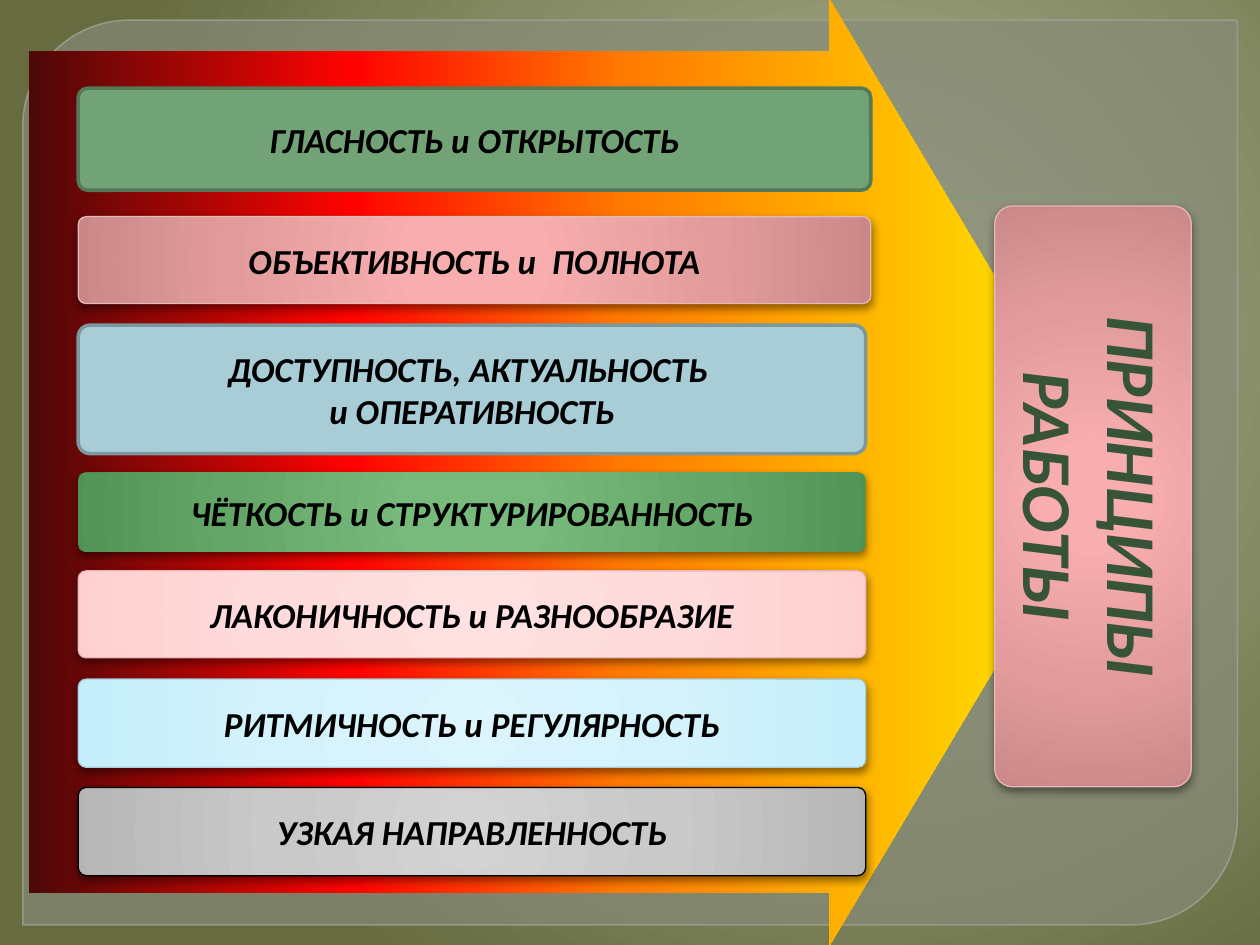
import pptx
import pptx.dml.color
import pptx.enum.shapes
import pptx.enum.text
import pptx.oxml
import pptx.oxml.ns
import pptx.util

Pt = pptx.util.Pt
SHAPES = pptx.enum.shapes.MSO_SHAPE

COLORS = {
    "panel": "888B7B", "panel_line": "9DA090", "sage": "72A376", "sage_line": "547957",
    "blue": "A8CDD7", "blue_line": "7C989F", "rose_line": "E8B7B7",
    "black": "000000", "title": "375439",
}
GRADIENTS = {
    "backdrop": {0: "A9AE8D", 20: "9FA583", 100: "666C40"},
    "flame": {0: "FFF200", 45: "FF7A00", 70: "FF0300", 100: "4D0808"},
    "rose": {0: "F9AFAF", 15: "F8AEAE", 62: "E29B9B", 97: "CC8A8A", 100: "CA8787"},
    "green": {0: "77BB7C", 15: "77BA7C", 62: "63A668", 97: "549559", 100: "4F9254"},
    "blush": {0: "FFE1E1", 50: "FFDBDB", 97: "FFD1D1", 100: "FFCECE"},
    "ice": {0: "DCF4FC", 50: "D4F2FB", 97: "C6EFFB", 100: "C1EFFD"},
    "gray": {0: "D3D3D3", 50: "C9C9C9", 97: "B8B8B8", 100: "B2B2B2"},
}
BARS = [
    (50.4, 452.9, 58.3, "sage", "sage_line", 2, ["ГЛАСНОСТЬ и ОТКРЫТОСТЬ"]),
    (123.8, 452.9, 49.7, "rose", "rose_line", 0.75, ["ОБЪЕКТИВНОСТЬ и  ПОЛНОТА"]),
    (185.8, 450, 73.4, "blue", "blue_line", 2,
     ["ДОСТУПНОСТЬ, АКТУАЛЬНОСТЬ ", "и ОПЕРАТИВНОСТЬ"]),
    (270, 450, 45.4, "green", None, 0, ["ЧЁТКОСТЬ и СТРУКТУРИРОВАННОСТЬ"]),
    (326.2, 450, 49.7, "blush", "rose_line", 0.75, ["ЛАКОНИЧНОСТЬ и РАЗНООБРАЗИЕ"]),
    (388.1, 450, 50.4, "ice", "blue", 0.75, ["РИТМИЧНОСТЬ и РЕГУЛЯРНОСТЬ"]),
    (450, 450, 50.4, "gray", "black", 0.75, ["УЗКАЯ НАПРАВЛЕННОСТЬ"]),
]


def rgb(name):
    """Return the named colour."""
    return pptx.dml.color.RGBColor.from_string(COLORS[name])


def make_gradient(name, center=(50, 50, 50, 50), angle=None):
    """Return a radial gradient fill, or a linear one when an angle is given."""
    stops = "".join(f'<a:gs pos="{pos * 1000}"><a:srgbClr val="{color}"/></a:gs>'
                    for pos, color in GRADIENTS[name].items())
    if angle is None:
        sides = " ".join(f'{side}="{value * 1000}"' for side, value in zip("ltrb", center))
        course = f'<a:path path="circle"><a:fillToRect {sides}/></a:path>'
    else:
        course = f'<a:lin ang="{angle * 60000}" scaled="0"/>'
    return pptx.oxml.parse_xml(
        f'<a:gradFill {pptx.oxml.ns.nsdecls("a")} rotWithShape="1">'
        f'<a:gsLst>{stops}</a:gsLst>{course}</a:gradFill>')


def replace_fill(element, gradient):
    """Put a gradient in the place of a solid fill."""
    element.getparent().replace(element, gradient)


def set_alpha(element, percent):
    """Make a colour element partly transparent."""
    element.append(pptx.oxml.parse_xml(
        f'<a:alpha {pptx.oxml.ns.nsdecls("a")} val="{percent * 1000}"/>'))


def add_shadow(shape, alpha, blur, distance):
    """Cast a black shadow straight down."""
    shape._element.spPr.xpath("a:effectLst")[0].append(pptx.oxml.parse_xml(
        f'<a:outerShdw {pptx.oxml.ns.nsdecls("a")} blurRad="{Pt(blur)}" dist="{Pt(distance)}" '
        f'dir="5400000" rotWithShape="0"><a:srgbClr val="{COLORS["black"]}">'
        f'<a:alpha val="{alpha * 1000}"/></a:srgbClr></a:outerShdw>'))


def add_block(slide, kind, box, fill, line=None, weight=0, adjustments=(), angle=None):
    """Add a preset shape with a solid or gradient fill."""
    shape = slide.shapes.add_shape(kind, *(Pt(length) for length in box))
    shape.shadow.inherit = False
    for index, value in enumerate(adjustments):
        shape.adjustments[index] = value
    shape.fill.solid()
    if fill in GRADIENTS:
        replace_fill(shape._element.spPr.xpath("a:solidFill")[0], make_gradient(fill, angle=angle))
    else:
        shape.fill.fore_color.rgb = rgb(fill)
    if line:
        shape.line.color.rgb = rgb(line)
        shape.line.width = Pt(weight)
    else:
        shape.line.fill.background()
    return shape


def add_label(shape, lines, size, color, wrap):
    """Write centred bold italic lines in a shape."""
    frame = shape.text_frame
    frame.word_wrap = wrap
    frame.vertical_anchor = pptx.enum.text.MSO_ANCHOR.MIDDLE
    for index, line in enumerate(lines):
        para = frame.add_paragraph() if index else frame.paragraphs[0]
        para.alignment = pptx.enum.text.PP_ALIGN.CENTER
        span = para.add_run()
        span.text = line
        span.font.name = "Calibri"
        span.font.size = Pt(size)
        span.font.bold = span.font.italic = True
        span.font.color.rgb = rgb(color)


def draw_backdrop(slide, box):
    """Draw the background, the translucent panel and the thin rule."""
    left, top, width, height = box
    slide.background.fill.solid()
    replace_fill(slide.element.xpath(".//p:bgPr/a:solidFill")[0],
                 make_gradient("backdrop", center=(68, 35, 32, 65)))
    panel = add_block(slide, SHAPES.ROUND_2_DIAG_RECTANGLE,
                      (left + 13, top + 11.5, width - 26, height - 23),
                      "panel", "panel_line", 0.87, (0.118, 0))
    for path, alpha in (("a:solidFill/a:srgbClr", 65), ("a:ln/a:solidFill/a:srgbClr", 88)):
        set_alpha(panel._element.spPr.xpath(path)[0], alpha)
    rule = add_block(slide, SHAPES.RECTANGLE, (left + 46, top + 112.3, 630, 0.7), "sage")
    add_shadow(rule, 75, 1, 1)


def draw_arrow(slide, box):
    """Draw the large arrow that carries the principles."""
    add_block(slide, SHAPES.RIGHT_ARROW, box, "flame", adjustments=(0.89, 0.298), angle=180)


def draw_title(slide, box):
    """Draw the title turned a quarter clockwise inside an upright box."""
    left, top, width, height = box
    shift = (height - width) / 2
    title = add_block(slide, SHAPES.ROUNDED_RECTANGLE,
                      (left - shift, top + shift, height, width),
                      "rose", "rose_line", 0.75, (0.091,))
    title.rotation = 90
    add_shadow(title, 43, 5, 2)
    add_label(title, ["ПРИНЦИПЫ РАБОТЫ"], 40, "title", True)


def draw_principles(slide, box):
    """Stack the bars of principles within the box."""
    left, top = box[:2]
    for offset, width, height, fill, line, weight, lines in BARS:
        bar = add_block(slide, SHAPES.ROUNDED_RECTANGLE,
                        (left, top + offset - BARS[0][0], width, height),
                        fill, line, weight, (0.091,))
        if fill in GRADIENTS:
            add_shadow(bar, 43, 5, 2)
        add_label(bar, lines, 20, "black", False)


def main():
    """Build the slide and save it."""
    deck = pptx.Presentation()
    deck.slide_width, deck.slide_height = Pt(720), Pt(540)
    page = deck.slides.add_slide(deck.slide_layouts[6])
    draw_backdrop(page, (0, 0, 720, 540))
    draw_arrow(page, (16.6, 0, 618.5, 540))
    draw_title(page, (568.4, 117.7, 112.3, 331.9))
    draw_principles(page, (44.7, 50.4, 452.9, 450))
    deck.save("out.pptx")


if __name__ == "__main__":
    main()
